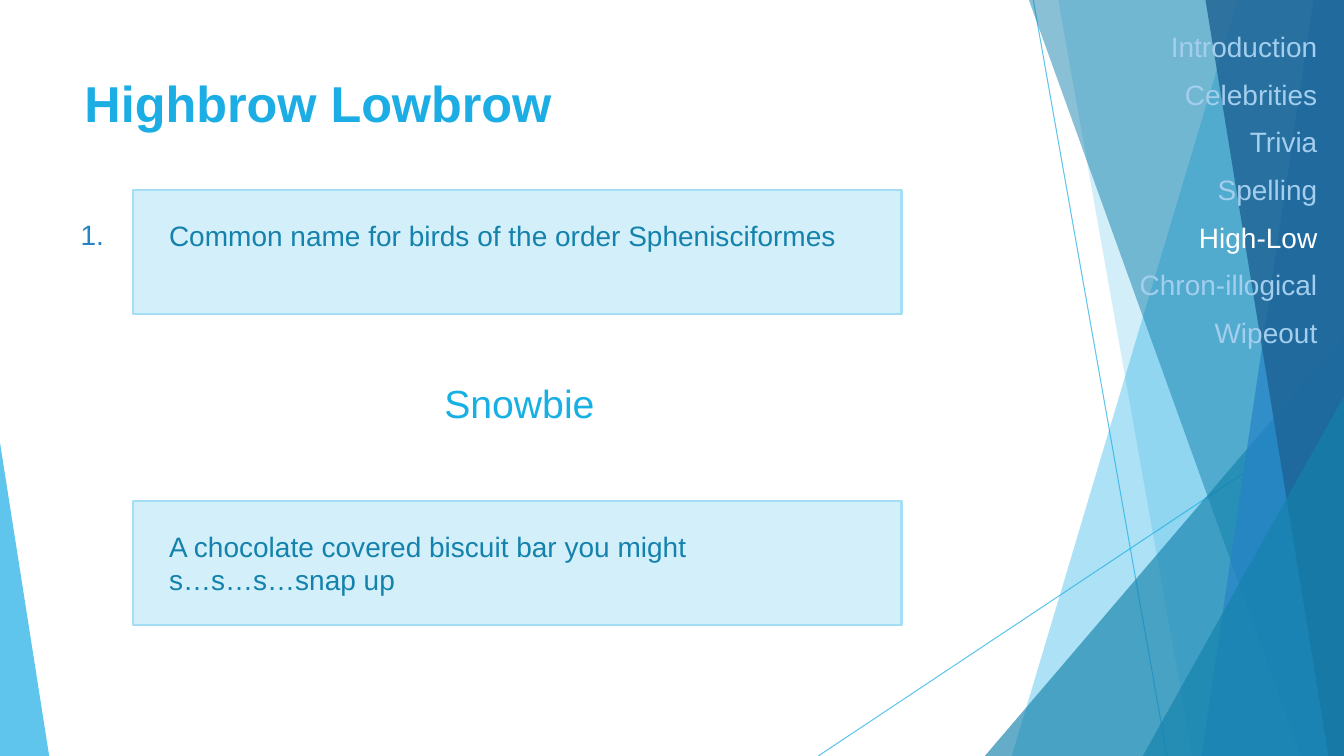
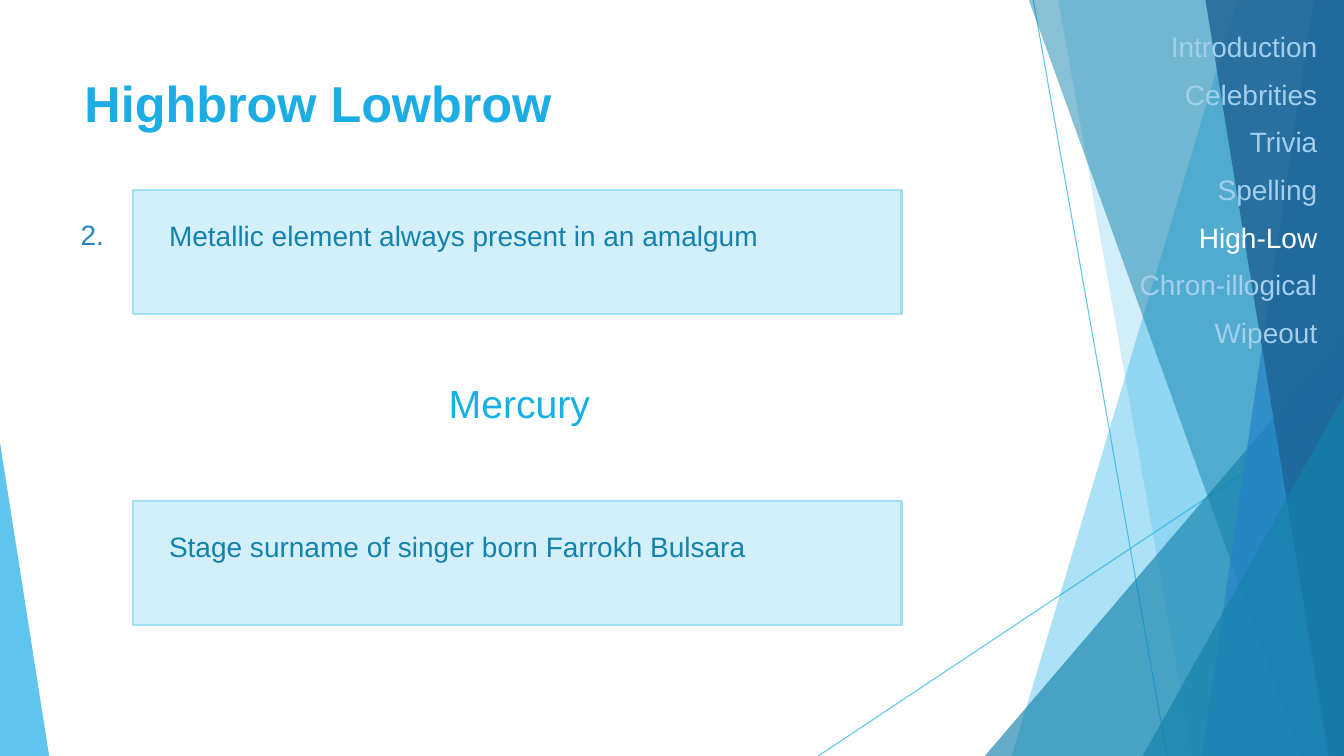
from dataclasses import dataclass

from lxml import etree
from pptx import Presentation
from pptx import util as u
from pptx.dml.color import RGBColor
from pptx.enum import shapes, text
from pptx.oxml import ns


@dataclass(frozen=True)
class Theme:
    font: str = "Arial"
    sky: str = "1CADE4"
    teal: str = "1482AC"
    blue: str = "2683C6"
    navy: str = "1D6294"
    answer: str = "17B0E4"
    card_fill: str = "D2EFFA"
    card_line: str = "A4DEF4"
    menu: str = "A3CEED"
    menu_current: str = "FFFFFF"
    title_size: int = 36
    answer_size: int = 28
    body_size: int = 20


THEME = Theme()
WIDTH, HEIGHT = 33.87, 19.05

ROUNDS = ["Introduction", "Celebrities", "Trivia", "Spelling",
          "High-Low", "Chron-illogical", "Wipeout"]
CURRENT_ROUND = "High-Low"

# Highbrow clue, shared answer, lowbrow clue
QUESTIONS = [
    (["Common name for birds of the order Sphenisciformes"],
     "Snowbie",
     ["A chocolate covered biscuit bar you might", "s…s…s…snap up"]),
    (["Metallic element always present in an amalgum"],
     "Mercury",
     ["Stage surname of singer born Farrokh Bulsara"]),
]


def set_alpha(fill, percent):
    """Make a solid fill, of a shape or a line, partly transparent."""
    color = fill._xPr.find(".//" + ns.qn("a:srgbClr"))
    alpha = etree.SubElement(color, ns.qn("a:alpha"))
    alpha.set("val", str(percent * 1000))


def paint(shape, color, alpha=None, line=None):
    shape.shadow.inherit = False
    shape.fill.solid()
    shape.fill.fore_color.rgb = RGBColor.from_string(color)
    if alpha is not None:
        set_alpha(shape.fill, alpha)
    if line:
        shape.line.color.rgb = RGBColor.from_string(line)
        shape.line.width = u.Pt(1.5)
    else:
        shape.line.fill.background()


def add_text(slide, lines, box, *, color, size=THEME.body_size, bold=False,
             align=text.PP_ALIGN.LEFT, anchor=text.MSO_ANCHOR.TOP,
             wrap=True, space_before=0, highlights=None):
    """Write one paragraph per line; highlights maps a line to its own colour."""
    frame = slide.shapes.add_textbox(*map(u.Cm, box)).text_frame
    frame.word_wrap = wrap
    frame.vertical_anchor = anchor
    for index, line in enumerate(lines):
        paragraph = frame.add_paragraph() if index else frame.paragraphs[0]
        paragraph.alignment = align
        paragraph.space_before = u.Pt(space_before)
        run = paragraph.add_run()
        run.text = line
        run.font.name = THEME.font
        run.font.size = u.Pt(size)
        run.font.bold = bold
        run.font.color.rgb = RGBColor.from_string((highlights or {}).get(line, color))


def add_ray(slide, start, end):
    ray = slide.shapes.add_connector(
        shapes.MSO_CONNECTOR.STRAIGHT, *map(u.Cm, (*start, *end)))
    ray.line.color.rgb = RGBColor.from_string(THEME.sky)
    ray.line.width = u.Pt(0.75)
    set_alpha(ray.line.fill, 70)
    etree.SubElement(ray._element.spPr, ns.qn("a:effectLst"))


def add_band(slide, top_x, bottom_x, color, alpha):
    """Full-height band from a slanted left edge to the right of the slide."""
    outline = slide.shapes.build_freeform(u.Cm(top_x), 0)
    corners = [(WIDTH, 0), (WIDTH, HEIGHT), (bottom_x, HEIGHT)]
    outline.add_line_segments([(u.Cm(x), u.Cm(y)) for x, y in corners])
    paint(outline.convert_to_shape(), color, alpha)


def add_corner(slide, left, right, top, apex, color, alpha):
    """Triangle standing on the bottom edge, its apex at 0 (left) or 1 (right)."""
    corner = slide.shapes.add_shape(
        shapes.MSO_SHAPE.ISOSCELES_TRIANGLE,
        *map(u.Cm, (left, top, right - left, HEIGHT - top)))
    corner.adjustments[0] = apex
    paint(corner, color, alpha)


def add_backdrop(slide):
    add_ray(slide, (26.04, 0), (29.41, HEIGHT))
    add_ray(slide, (WIDTH, 10.24), (20.62, HEIGHT))
    add_band(slide, 31.19, 25.5, THEME.sky, 36)
    add_band(slide, 26.67, 30.05, THEME.sky, 20)
    add_corner(slide, 24.82, WIDTH, 8.46, 1, THEME.teal, 66)
    add_band(slide, 25.93, 32.79, THEME.teal, 50)
    add_band(slide, 33.1, 30.28, THEME.blue, 70)
    add_band(slide, 30.38, 33.48, THEME.navy, 80)
    add_corner(slide, 28.8, WIDTH, 9.98, 1, THEME.teal, 66)
    add_corner(slide, 0, 1.24, 11.15, 0, THEME.sky, 70)


def add_round_menu(slide):
    add_text(slide, ROUNDS, (26.82, 0.62, 6.63, 11.48), color=THEME.menu,
             align=text.PP_ALIGN.RIGHT, space_before=10,
             highlights={CURRENT_ROUND: THEME.menu_current})


def add_clue(slide, lines, top):
    card = slide.shapes.add_shape(
        shapes.MSO_SHAPE.RECTANGLE, *map(u.Cm, (3.35, top, 19.37, 3.13)))
    paint(card, THEME.card_fill, line=THEME.card_line)
    add_text(slide, lines, (4.01, top + 0.59, 18.11, 1.96), color=THEME.teal)


def add_question(deck, number, highbrow, answer, lowbrow):
    slide = deck.slides.add_slide(deck.slide_layouts[6])
    # Shared parts
    add_backdrop(slide)
    add_text(slide, ["Highbrow Lowbrow"], (1.88, 1.7, 23.88, 3.66),
             color=THEME.sky, size=THEME.title_size, bold=True)
    add_round_menu(slide)
    # Question
    add_text(slide, [f"{number}."], (1.78, 5.36, 1.14, 1.12),
             color=THEME.blue, wrap=False)
    add_clue(slide, highbrow, 4.78)
    add_text(slide, [answer], (7.82, 9.32, 10.54, 1.68), color=THEME.answer,
             size=THEME.answer_size, align=text.PP_ALIGN.CENTER,
             anchor=text.MSO_ANCHOR.MIDDLE)
    add_clue(slide, lowbrow, 12.62)


def main():
    deck = Presentation()
    deck.slide_width, deck.slide_height = u.Cm(WIDTH), u.Cm(HEIGHT)
    for number, question in enumerate(QUESTIONS, start=1):
        add_question(deck, number, *question)
    deck.save("out.pptx")


if __name__ == "__main__":
    main()
